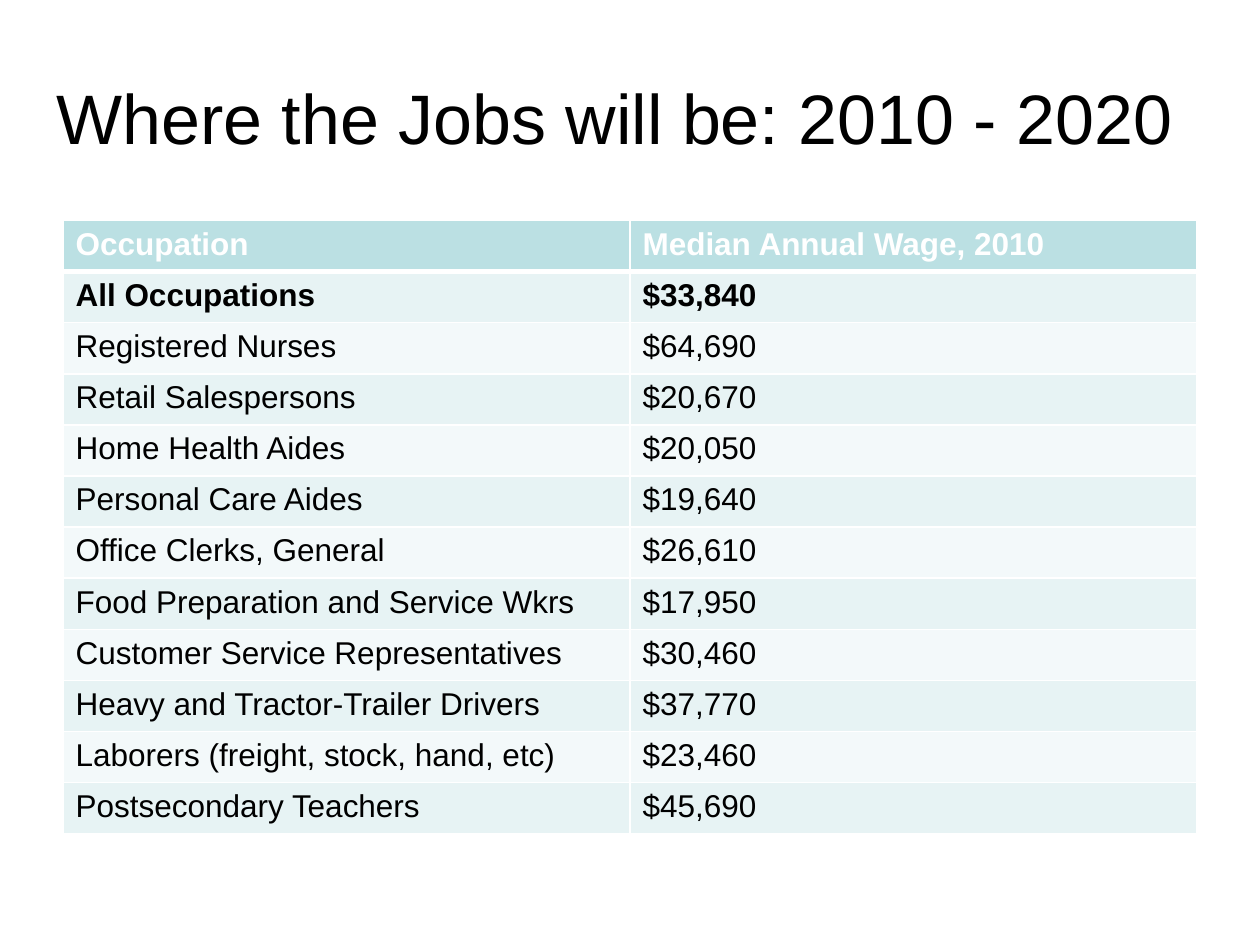
from typing import NamedTuple

import pptx
import pptx.dml.color
import pptx.enum.text
import pptx.oxml.ns
import pptx.util
from lxml import etree

RGBColor = pptx.dml.color.RGBColor
BLACK = RGBColor(0x00, 0x00, 0x00)
WHITE = RGBColor(0xFF, 0xFF, 0xFF)
HEADER = RGBColor(0xBB, 0xE0, 0xE3)
BANDS = (RGBColor(0xE7, 0xF3, 0xF4), RGBColor(0xF3, 0xF9, 0xFA))

WIDTH = pptx.util.Inches(10)
HEIGHT = pptx.util.Inches(7.5)
FONT = "Arial"
THIN, THICK = 1, 3


class Job(NamedTuple):
    occupation: str
    wage: str


HEADING = Job("Occupation", "Median Annual Wage, 2010")
JOBS = [
    Job("All Occupations", "$33,840"),
    Job("Registered Nurses", "$64,690"),
    Job("Retail Salespersons", "$20,670"),
    Job("Home Health Aides", "$20,050"),
    Job("Personal Care Aides", "$19,640"),
    Job("Office Clerks, General", "$26,610"),
    Job("Food Preparation and Service Wkrs", "$17,950"),
    Job("Customer Service Representatives", "$30,460"),
    Job("Heavy and Tractor-Trailer Drivers", "$37,770"),
    Job("Laborers (freight, stock, hand, etc)", "$23,460"),
    Job("Postsecondary Teachers", "$45,690"),
]


def write(tf, text: str, *, size: float, color: RGBColor = BLACK,
          bold: bool = False, align=pptx.enum.text.PP_ALIGN.LEFT) -> None:
    p = tf.paragraphs[0]
    p.alignment = align
    r = p.add_run()
    r.text = text
    r.font.name = FONT
    r.font.size = pptx.util.Pt(size)
    r.font.bold = bold
    r.font.color.rgb = color


def set_borders(cell, *, top: float, bottom: float) -> None:
    qn = pptx.oxml.ns.qn
    tc_pr = cell._tc.get_or_add_tcPr()
    widths = {"a:lnL": THIN, "a:lnR": THIN, "a:lnT": top, "a:lnB": bottom}
    for tag, width in widths.items():
        ln = etree.SubElement(tc_pr, qn(tag), w=str(pptx.util.Pt(width)))
        fill = etree.SubElement(ln, qn("a:solidFill"))
        etree.SubElement(fill, qn("a:srgbClr"), val=str(WHITE))


def add_title(s, text: str) -> None:
    box = s.shapes.add_textbox(0, int(HEIGHT * 0.04), int(WIDTH * 0.975), HEIGHT // 6)
    tf = box.text_frame
    tf.word_wrap = True
    tf.vertical_anchor = pptx.enum.text.MSO_ANCHOR.MIDDLE
    write(tf, text, size=40, align=pptx.enum.text.PP_ALIGN.CENTER)


def add_wage_table(s, heading: Job, jobs: list[Job]) -> None:
    rows = [heading, *jobs]
    table = s.shapes.add_table(
        len(rows), len(heading), int(WIDTH * 0.05), pptx.util.Inches(1.75),
        int(WIDTH * 0.9), pptx.util.Inches(4.87)).table
    for i, job in enumerate(rows):
        is_header = i == 0
        for j, text in enumerate(job):
            cell = table.cell(i, j)
            set_borders(cell, top=THICK if i == 1 else THIN,
                        bottom=THICK if is_header else THIN)
            cell.fill.solid()
            cell.fill.fore_color.rgb = HEADER if is_header else BANDS[(i - 1) % 2]
            write(cell.text_frame, text, size=18, bold=i < 2,
                  color=WHITE if is_header else BLACK)


def main() -> None:
    prs = pptx.Presentation()
    prs.slide_width, prs.slide_height = WIDTH, HEIGHT
    s = prs.slides.add_slide(prs.slide_layouts[6])
    add_title(s, "Where the Jobs will be: 2010 - 2020")
    add_wage_table(s, HEADING, JOBS)
    prs.save("out.pptx")


if __name__ == "__main__":
    main()
